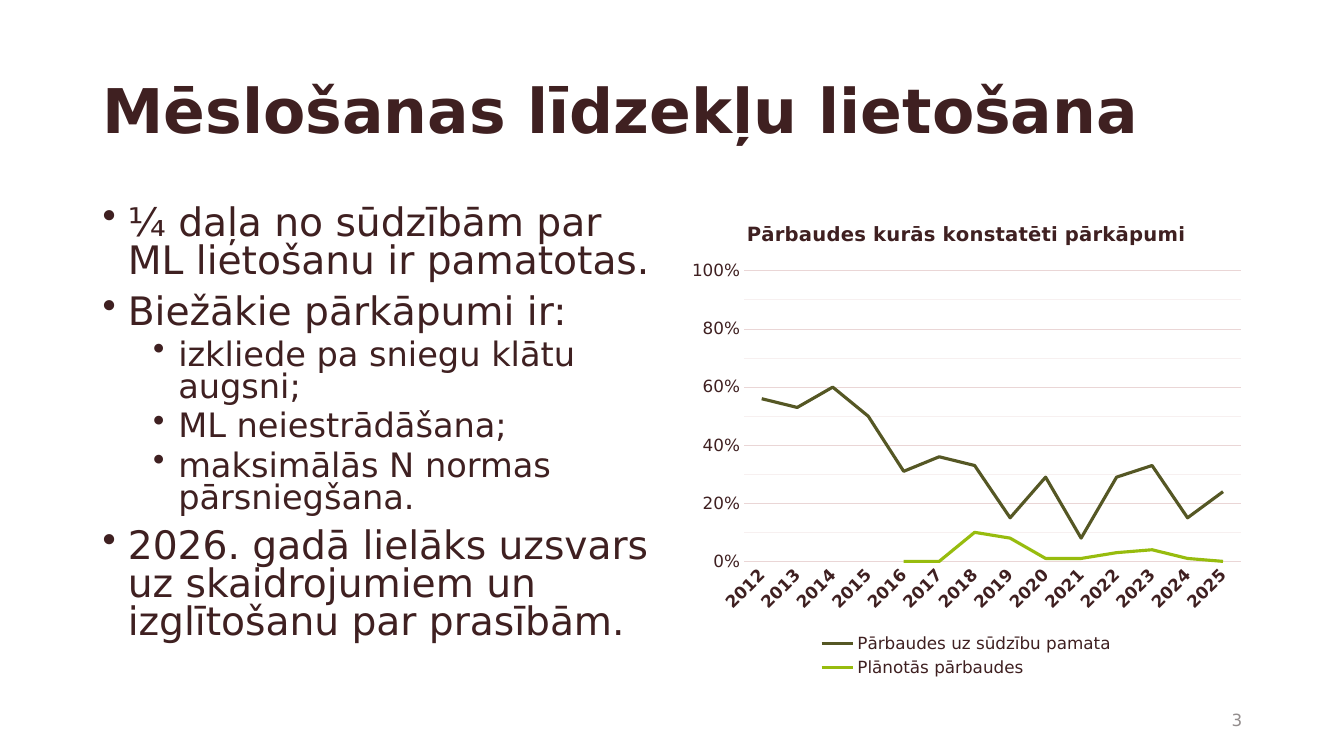
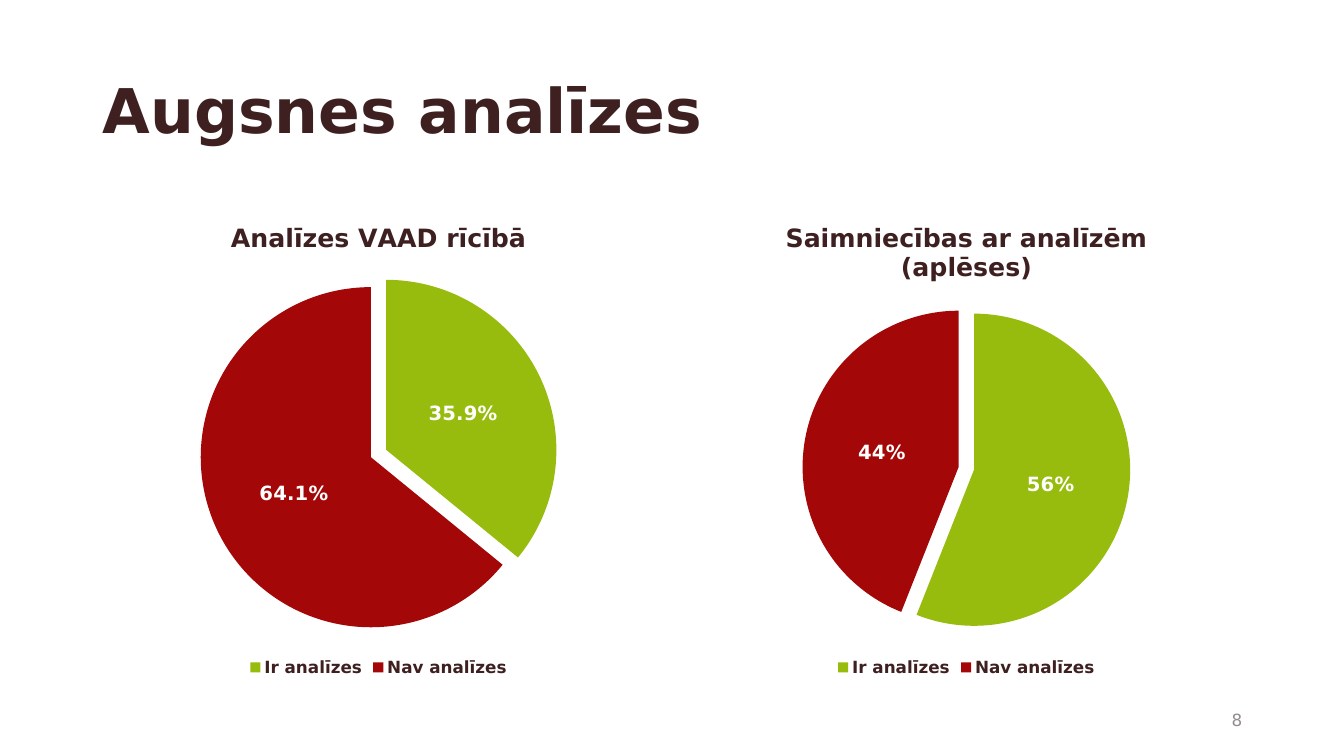
from copy import deepcopy

from pptx import Presentation
from pptx.chart.data import CategoryChartData
from pptx.dml.color import RGBColor
from pptx.enum.chart import XL_CHART_TYPE as CT
from pptx.enum.chart import XL_LABEL_POSITION as LP
from pptx.enum.chart import XL_LEGEND_POSITION as LEG
from pptx.enum.chart import XL_TICK_MARK as TM
from pptx.enum.text import MSO_ANCHOR, PP_ALIGN
from pptx.oxml.ns import qn
from pptx.oxml.xmlchemy import OxmlElement
from pptx.util import Inches, Pt

FONT = "DejaVu Sans"
COLORS = {
    "text": "3F2021",
    "muted": "938D8D",
    "grid": "EAD6D6",
    "minor_grid": "F7F0F0",
    "olive": "555724",
    "green": "97BC0E",
    "red": "A30707",
    "white": "FFFFFF",
}
LEFT, RIGHT, TOP, WIDTH, HEIGHT = 0.92, 6.75, 2, 5.67, 4.76

BULLETS = [
    (0, "¼ daļa no sūdzībām par ML lietošanu ir pamatotas."),
    (0, "Biežākie pārkāpumi ir:"),
    (1, "izkliede pa sniegu klātu augsni;"),
    (1, "ML neiestrādāšana;"),
    (1, "maksimālās N normas pārsniegšana."),
    (0, "2026. gadā lielāks uzsvars uz skaidrojumiem un izglītošanu par prasībām."),
]
YEARS = [str(year) for year in range(2012, 2026)]
CHECKS = [
    ("Pārbaudes uz sūdzību pamata", "olive",
     [0.56, 0.53, 0.6, 0.5, 0.31, 0.36, 0.33, 0.15, 0.29, 0.08, 0.29, 0.33, 0.15, 0.24]),
    ("Plānotās pārbaudes", "green",
     [None, None, 0, None, 0, 0, 0.1, 0.08, 0.01, 0.01, 0.03, 0.04, 0.01, 0]),
]
PIES = [
    (LEFT, "Analīzes VAAD rīcībā", [0.359, 0.641], "0.0%"),
    (RIGHT, "Saimniecības ar analīzēm (aplēses)", [0.56, 0.44], "0%"),
]


def rgb(name):
    return RGBColor.from_string(COLORS[name])


def style_font(font, size, color="text", bold=False):
    font.name = FONT
    font.size = Pt(size)
    font.bold = bold
    font.color.rgb = rgb(color)


def style_line(line, color, width=0.75):
    line.color.rgb = rgb(color)
    line.width = Pt(width)


def add_text_frame(slide, x, y, w, h, anchor):
    tf = slide.shapes.add_textbox(Inches(x), Inches(y), Inches(w), Inches(h)).text_frame
    tf.word_wrap = True
    tf.vertical_anchor = anchor
    return tf


def add_label(slide, box, text, size, color="text", bold=False, align=PP_ALIGN.LEFT):
    tf = add_text_frame(slide, *box, MSO_ANCHOR.MIDDLE)
    tf.text = text
    p = tf.paragraphs[0]
    p.alignment = align
    p.line_spacing = 0.9
    style_font(p.runs[0].font, size, color, bold)


def add_base_slide(prs, title, number):
    slide = prs.slides.add_slide(prs.slide_layouts[6])
    add_label(slide, (LEFT, 0.4, 11.5, 1.45), title, 44, bold=True)
    add_label(slide, (9.42, 6.95, 3, 0.4), str(number), 12, "muted", align=PP_ALIGN.RIGHT)
    return slide


def add_bullets(slide, items):
    tf = add_text_frame(slide, LEFT, TOP, WIDTH, HEIGHT, MSO_ANCHOR.TOP)
    for i, (level, text) in enumerate(items):
        p = tf.add_paragraph() if i else tf.paragraphs[0]
        p.text = text
        p.level = level
        p.line_spacing = 0.8
        if i:
            p.space_before = Pt(5 if level else 10)
        pPr = p._p.get_or_add_pPr()
        pPr.set("marL", str(Inches(0.25 + 0.5 * level)))
        pPr.set("indent", str(Inches(-0.25)))
        bullet = OxmlElement("a:buChar")
        bullet.set("char", "•")
        pPr.append(bullet)
        style_font(p.runs[0].font, 24 if level else 28)


def add_chart(slide, kind, x, data, title, title_size, bold_legend):
    chart = slide.shapes.add_chart(
        kind, Inches(x), Inches(TOP), Inches(WIDTH), Inches(HEIGHT), data).chart
    style_font(chart.font, 12)
    chart.has_title = True
    tf = chart.chart_title.text_frame
    tf.text = title
    style_font(tf.paragraphs[0].runs[0].font, title_size, bold=True)
    chart.has_legend = True
    chart.legend.position = LEG.BOTTOM
    chart.legend.include_in_layout = False
    style_font(chart.legend.font, 12, bold=bold_legend)
    return chart


def style_gridlines(axis):
    axis.has_major_gridlines = axis.has_minor_gridlines = True
    style_line(axis.major_gridlines.format.line, "grid")
    major = axis._element.find(qn("c:majorGridlines"))
    minor = axis._element.find(qn("c:minorGridlines"))
    minor.append(deepcopy(major.find(qn("c:spPr"))))
    next(minor.iter(qn("a:srgbClr"))).set("val", COLORS["minor_grid"])


def style_axes(chart):
    cat, val = chart.category_axis, chart.value_axis
    for axis in (cat, val):
        axis.major_tick_mark = axis.minor_tick_mark = TM.NONE
        style_font(axis.tick_labels.font, 12, bold=axis is cat)
    style_line(cat.format.line, "grid")
    cat._element.find(qn("c:txPr")).find(qn("a:bodyPr")).set("rot", "-2700000")
    val.minimum_scale, val.maximum_scale = 0, 1
    val.major_unit, val.minor_unit = 0.2, 0.1
    style_gridlines(val)
    val.format.line.fill.background()
    val.tick_labels.number_format = "0%"
    val.tick_labels.number_format_is_linked = False


def add_line_chart(slide, x, title, categories, rows):
    data = CategoryChartData(number_format="0%")
    data.categories = categories
    for name, _, values in rows:
        data.add_series(name, values)
    chart = add_chart(slide, CT.LINE, x, data, title, 14, False)
    style_axes(chart)
    for series, (_, color, _) in zip(chart.plots[0].series, rows):
        series.smooth = False
        style_line(series.format.line, color, 2.25)


def add_pie_chart(slide, x, title, values, number_format):
    data = CategoryChartData(number_format=number_format)
    data.categories = ["Ir analīzes", "Nav analīzes"]
    data.add_series("Series 1", values)
    chart = add_chart(slide, CT.PIE, x, data, title, 18, True)
    plot = chart.plots[0]
    plot.vary_by_categories = True
    series = plot.series[0]
    explosion = OxmlElement("c:explosion")
    explosion.set("val", "5")
    series._element.find(qn("c:tx")).addnext(explosion)
    for i, color in enumerate(("green", "red")):
        fill = series.points[i].format.fill
        fill.solid()
        fill.fore_color.rgb = rgb(color)
    labels = series.data_labels
    labels.show_value = True
    labels.show_percentage = False
    labels.position = LP.CENTER
    labels.number_format = number_format
    labels.number_format_is_linked = False
    style_font(labels.font, 14, "white", True)


def main():
    prs = Presentation()
    prs.slide_width, prs.slide_height = Inches(13.33), Inches(7.5)

    slide = add_base_slide(prs, "Mēslošanas līdzekļu lietošana", 3)
    add_bullets(slide, BULLETS)
    add_line_chart(slide, RIGHT, "Pārbaudes kurās konstatēti pārkāpumi", YEARS, CHECKS)

    slide = add_base_slide(prs, "Augsnes analīzes", 8)
    for pie in PIES:
        add_pie_chart(slide, *pie)

    prs.save("out.pptx")


if __name__ == "__main__":
    main()
